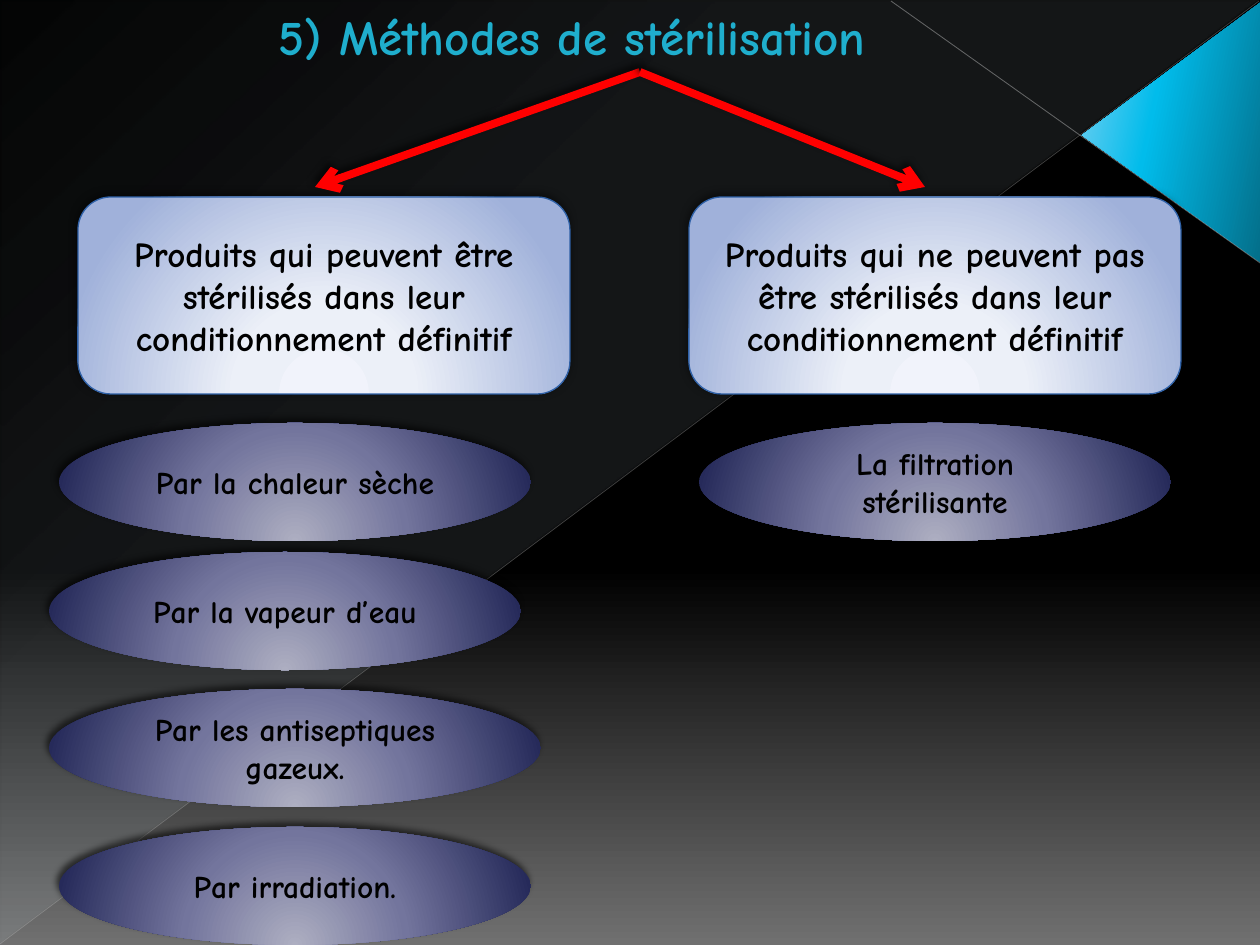
from lxml import etree
from pptx import Presentation, util as u
from pptx.dml.color import RGBColor
from pptx.enum import shapes, text
from pptx.oxml.ns import qn

PX = u.Inches(1) / 126  # one scale: 126 px to the inch
FONT = "Comic Neue"

BLACK = RGBColor(0x00, 0x00, 0x00)
GREY = RGBColor(0x70, 0x70, 0x70)
RED = RGBColor(0xFF, 0x00, 0x00)
TITLE_BLUE = RGBColor(0x1F, 0xAE, 0xCD)
EDGE_BLUE = RGBColor(0x2F, 0x61, 0xA7)
MIST = RGBColor(0xDE, 0xF5, 0xFA)
RULE_LIGHT = RGBColor(0xC1, 0xC1, 0xC1)
RULE_DARK = RGBColor(0xB9, 0xB9, 0xB9)

# Gradient stops: (position %, colour, opacity %)
PAGE_STOPS = [(0, BLACK, 100), (60, BLACK, 100), (100, GREY, 100)]
MIST_STOPS = [(0, MIST, 10), (70, MIST, 8), (100, MIST, 1)]
CYAN_STOPS = [(0, RGBColor(0x03, 0x6E, 0x89), 100),
              (60, RGBColor(0x01, 0xBC, 0xEB), 100),
              (100, RGBColor(0x7C, 0xD1, 0xF2), 100)]
BOX_STOPS = [(0, RGBColor(0xF1, 0xF3, 0xFB), 100),
             (34, RGBColor(0xEC, 0xF0, 0xF8), 100),
             (100, RGBColor(0xA0, 0xB1, 0xDA), 100)]
OVAL_STOPS = [(0, RGBColor(0xAD, 0xAE, 0xC1), 100),
              (46, RGBColor(0x73, 0x75, 0x9D), 100),
              (100, RGBColor(0x26, 0x2A, 0x5A), 100)]

# Shadows: opacity %, blur pt, distance pt
BOX_SHADOW = (50, 5, 2)
SOFT_SHADOW = (60, 4, 3)

BOXES = [(78, "Produits qui peuvent être stérilisés dans leur conditionnement définitif"),
         (689, "Produits qui ne peuvent pas être stérilisés dans leur conditionnement définitif")]
OVALS = [(59, 423, 472, "Par la chaleur sèche"),
         (49, 552, 472, "Par la vapeur d’eau"),
         (49, 689, 492, "Par les antiseptiques gazeux."),
         (59, 827, 472, "Par irradiation."),
         (699, 423, 472, "La filtration stérilisante")]


def px(*values):
    return [u.Emu(round(v * PX)) for v in values]


def sub(parent, tag, **attrs):
    return etree.SubElement(parent, qn(tag), {k: str(v) for k, v in attrs.items()})


def set_attrs(target, values):
    for name, value in values.items():
        setattr(target, name, value)


def add_color(parent, rgb, opacity):
    clr = sub(parent, "a:srgbClr", val=rgb)
    if opacity < 100:
        sub(clr, "a:alpha", val=opacity * 1000)


def gradient(fill, element, stops, angle=None):
    """Linear gradient at an angle, or a glow from below when there is none."""
    fill.gradient()
    grad = element.find(".//" + qn("a:gradFill"))
    for child in list(grad):
        grad.remove(child)
    grad.set("rotWithShape", "1")
    stop_list = sub(grad, "a:gsLst")
    for pos, rgb, opacity in stops:
        add_color(sub(stop_list, "a:gs", pos=pos * 1000), rgb, opacity)
    if angle is None:
        path_el = sub(grad, "a:path", path="circle")
        sub(path_el, "a:fillToRect", l=50000, t=155000, r=50000, b=-55000)
    else:
        sub(grad, "a:lin", ang=angle * 60000, scaled=0)


def add_shadow(effects, shadow):
    opacity, blur, dist = shadow
    outer = sub(effects, "a:outerShdw", blurRad=u.Pt(blur), dist=u.Pt(dist),
                dir=245 * 60000, algn="tl", rotWithShape=0)
    add_color(outer, BLACK, opacity)


def write(tf, content, size, color, align):
    p = tf.paragraphs[0]
    p.alignment = align
    r = p.add_run()
    r.text = content
    set_attrs(r.font, {"size": u.Pt(size), "name": FONT, "bold": True})
    r.font.color.rgb = color


def add_panel(s, kind, box, stops, angle=None, flip=False, edge=None, shadow=None):
    sp = s.shapes.add_shape(kind, *px(*box))
    gradient(sp.fill, sp._element, stops, angle)
    if edge is None:
        sp.line.fill.background()
    else:
        sp.line.color.rgb = edge
        sp.line.width = u.Pt(0.75)
    sp.shadow.inherit = False
    if shadow:
        add_shadow(sp._element.spPr.find(qn("a:effectLst")), shadow)
    if flip:
        sp._element.spPr.xfrm.set("flipV", "1")
    return sp


def add_label(s, kind, box, content, size, stops, **style):
    sp = add_panel(s, kind, box, stops, **style)
    set_attrs(sp.text_frame, {"word_wrap": True,
                              "vertical_anchor": text.MSO_ANCHOR.MIDDLE})
    write(sp.text_frame, content, size, BLACK, text.PP_ALIGN.CENTER)


def add_line(s, ends, color, width, opacity=100, arrow=False, shadow=None):
    line = s.shapes.add_connector(shapes.MSO_CONNECTOR.STRAIGHT, *px(*ends))
    line.line.color.rgb = color
    line.line.width = u.Pt(width)
    sp_pr = line._element.spPr
    if opacity < 100:
        sub(sp_pr.find(".//" + qn("a:srgbClr")), "a:alpha", val=opacity * 1000)
    if arrow:
        sub(sp_pr.find(qn("a:ln")), "a:tailEnd", type="arrow")
    effects = sub(sp_pr, "a:effectLst")
    if shadow:
        add_shadow(effects, shadow)


def add_backdrop(s):
    gradient(s.background.fill, s._element, PAGE_STOPS, 90)
    kinds = shapes.MSO_SHAPE
    add_panel(s, kinds.RIGHT_TRIANGLE, (1, 1, 1258, 943), MIST_STOPS, 133, flip=True)
    corner = add_panel(s, kinds.ISOSCELES_TRIANGLE, (1041, 43, 261, 179),
                       CYAN_STOPS, 258, flip=True)
    corner.rotation = 90
    corner.adjustments[0] = 0.51
    add_line(s, (1260, 263, 891, 1), RULE_LIGHT, 0.47, opacity=45)
    add_line(s, (0, 944, 1259, 1), RULE_DARK, 0.39, opacity=35)


def add_title(s, content):
    title = s.shapes.title
    s.shapes._spTree.append(title._element)  # in front of the backdrop
    left, top, width, height = px(266, 0, 748, 72)
    set_attrs(title, {"left": left, "top": top, "width": width, "height": height})
    set_attrs(title.text_frame, {"word_wrap": False,
                                 "auto_size": text.MSO_AUTO_SIZE.SHAPE_TO_FIT_TEXT,
                                 "vertical_anchor": text.MSO_ANCHOR.TOP})
    write(title.text_frame, content, 28, TITLE_BLUE, text.PP_ALIGN.LEFT)


def main():
    prs = Presentation()
    prs.slide_width, prs.slide_height = px(1260, 945)
    s = prs.slides.add_slide(prs.slide_layouts[5])

    add_backdrop(s)
    add_title(s, "5) Méthodes de stérilisation")

    # Two product families
    for left, content in BOXES:
        add_label(s, shapes.MSO_SHAPE.ROUNDED_RECTANGLE, (left, 197, 492, 197),
                  content, 20, BOX_STOPS, edge=EDGE_BLUE, shadow=BOX_SHADOW)

    # Arrows from the title to each family
    for tip in (315, 925):
        add_line(s, (640, 72, tip, 187), RED, 4.5, arrow=True, shadow=SOFT_SHADOW)

    # Methods under each family
    for left, top, width, content in OVALS:
        add_label(s, shapes.MSO_SHAPE.OVAL, (left, top, width, 118),
                  content, 18, OVAL_STOPS, shadow=SOFT_SHADOW)

    prs.save("out.pptx")


if __name__ == "__main__":
    main()
